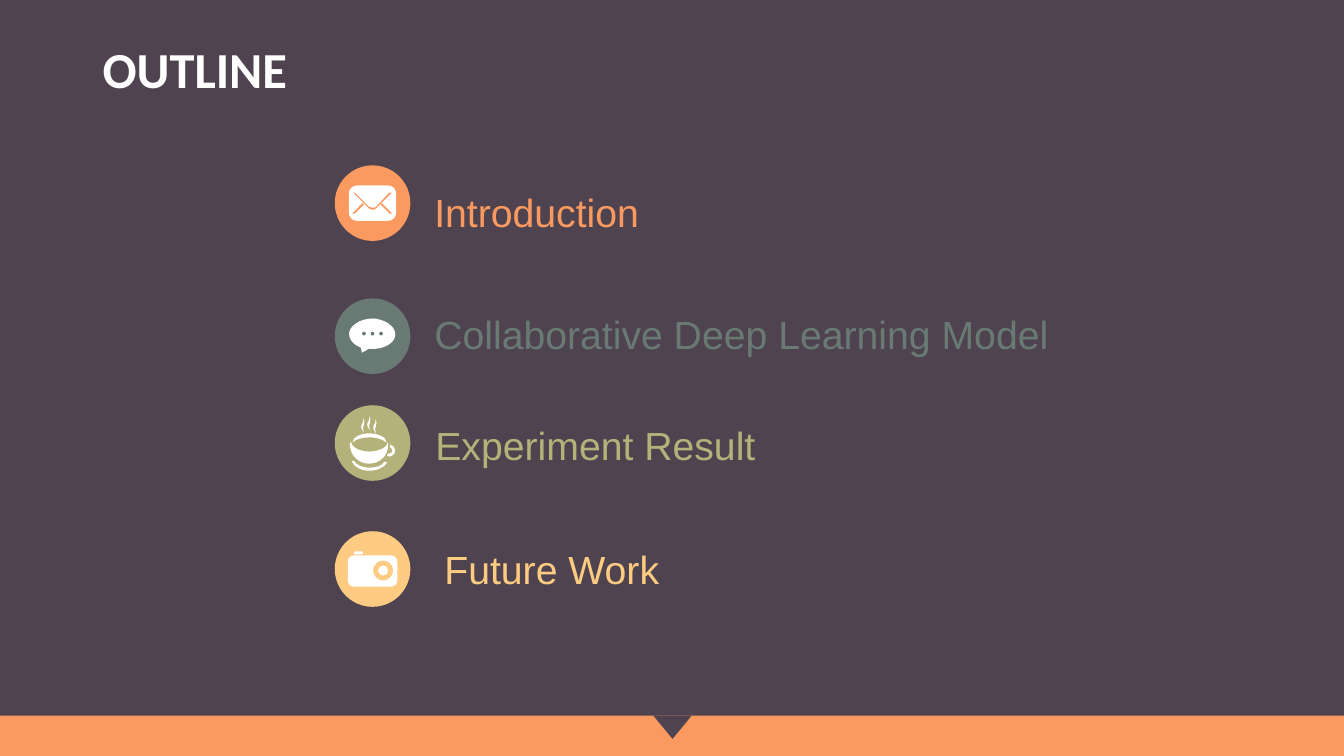
from dataclasses import dataclass

from lxml import etree
from pptx import Presentation
from pptx.dml.color import RGBColor
from pptx.enum.shapes import MSO_SHAPE
from pptx.enum.text import MSO_ANCHOR, MSO_AUTO_SIZE
from pptx.oxml.ns import qn
from pptx.util import Inches, Pt

RECTANGLE, TRIANGLE, OVAL = MSO_SHAPE.RECTANGLE, MSO_SHAPE.ISOSCELES_TRIANGLE, MSO_SHAPE.OVAL
TOP = MSO_ANCHOR.TOP
FIT_SHAPE, NO_FIT = MSO_AUTO_SIZE.SHAPE_TO_FIT_TEXT, MSO_AUTO_SIZE.NONE

COLORS = {
    "plum": "4F434F", "orange": "FA9A60", "slate": "697A74",
    "olive": "B4B17A", "yellow": "FDCB82", "white": "FFFFFF",
}
BADGE_LEFT, BADGE_SIZE = 3.32, 0.75
ARC = 0.55  # control distance of a quarter circle, as a share of its radius

# A step holds one point (start or line) or three points (cubic curve)
Step = tuple[float, ...]
Outline = list[Step]


@dataclass
class Topic:
    text: str
    color: str
    badge_top: float
    text_left: float
    text_top: float
    text_width: float
    icon: list[Outline]


# Outlines, in hundredths of an inch from the badge's top left corner
def round_box(left: float, top: float, width: float, height: float, radius: float) -> Outline:
    right, bottom, gap = left + width, top + height, radius * (1 - ARC)
    return [
        (left + radius, top), (right - radius, top),
        (right - gap, top, right, top + gap, right, top + radius), (right, bottom - radius),
        (right, bottom - gap, right - gap, bottom, right - radius, bottom),
        (left + radius, bottom),
        (left + gap, bottom, left, bottom - gap, left, bottom - radius), (left, top + radius),
        (left, top + gap, left + gap, top, left + radius, top),
    ]


def circle(x: float, y: float, radius: float) -> Outline:
    box = round_box(x - radius, y - radius, 2 * radius, 2 * radius, radius)
    return [box[0]] + [step for step in box if len(step) == 6]


def steam(x: float, y: float) -> Outline:
    return [(x, y), (x + 4, y + 6, x - 2, y + 6, x + 1, y + 14),
            (x - 6, y + 5, x + 2, y + 7, x, y)]


crease = [(28, 37), (17, 48), (20, 48), (29, 39)]
ENVELOPE = [
    [(74.5 - x, y) for x, y in crease],
    crease,
    [(18, 27), (34, 43), (35, 44, 36, 44, 37, 44), (39, 44, 40, 44, 41, 43),
     (57, 27), (54, 27), (41, 41), (40, 42, 39, 42, 37, 42),
     (36, 42, 35, 42, 34, 41), (20, 27)],
    round_box(14, 20, 47, 35, 8),
]
SPEECH_BUBBLE = [
    *[circle(x, 35, 2) for x in (46, 37.5, 29)],
    [(38, 20), (40, 20, 42, 20, 44, 21), (57, 24, 64, 34, 58, 42),
     (53, 48, 44, 51, 34, 50), (27, 54), (26, 49),
     (13, 44, 10, 32, 21, 25), (25, 22, 31, 20, 38, 20)],
]
CUP = [
    # Saucer, handle, bowl, rim
    [(19, 55), (21, 59, 27, 62, 34, 62), (41, 62, 48, 60, 49, 56), (52, 57),
     (49, 62, 42, 65, 34, 65), (26, 65, 19, 61, 17, 56)],
    [(55, 39), (58, 40, 60, 42, 60, 45), (60, 48, 57, 51, 54, 51), (52, 50),
     (53, 48), (54, 48), (56, 48, 57, 47, 57, 45), (57, 44, 56, 42, 55, 42)],
    [(53, 36), (53, 39), (53, 50, 45, 58, 34, 58), (24, 58, 15, 50, 15, 39),
     (16, 36), (16, 41, 24, 46, 34, 46), (45, 46, 53, 41, 53, 36)],
    [(34, 28), (43, 28, 51, 32, 51, 36), (51, 37), (48, 34, 42, 32, 34, 32),
     (27, 32, 20, 34, 18, 37), (18, 36), (18, 32, 25, 28, 34, 28)],
    *[steam(x, y) for x, y in ((40, 14), (28, 13), (34, 11))],
]
CAMERA = [
    circle(48, 39, 5),
    circle(48, 39, 10),
    round_box(13, 24, 49, 31, 6),
    round_box(19, 20, 9, 3, 1),
]

TOPICS = [
    Topic("Introduction", "orange", 1.64, 4.21, 1.82, 2.26, ENVELOPE),
    Topic("Collaborative Deep Learning Model", "slate", 2.96, 4.21, 3.03, 6.37, SPEECH_BUBBLE),
    Topic("Experiment Result", "olive", 4.02, 4.22, 4.13, 3.42, CUP),
    Topic("Future Work", "yellow", 5.27, 4.31, 5.36, 2.36, CAMERA),
]


def rgb(color: str) -> RGBColor:
    return RGBColor.from_string(COLORS[color])


def paint(shape, color: str) -> None:
    shape.shadow.inherit = False
    shape.fill.solid()
    shape.fill.fore_color.rgb = rgb(color)
    shape.line.fill.background()


def add_preset(page, kind, left: float, top: float, width: float, height: float, color: str):
    shape = page.shapes.add_shape(kind, Inches(left), Inches(top), Inches(width), Inches(height))
    paint(shape, color)
    return shape


def add_icon(page, outlines: list[Outline], top: float) -> None:
    scaled = [[tuple(Inches(value / 100) for value in step) for step in outline]
              for outline in outlines]
    builder = page.shapes.build_freeform(*scaled[0][0])
    for index, outline in enumerate(scaled):
        if index:
            builder.move_to(*outline[0])
        builder.add_line_segments([step[-2:] for step in outline[1:]], close=True)
    icon = builder.convert_to_shape(Inches(BADGE_LEFT), Inches(top))
    paint(icon, "white")

    # Bend the segments that have control points
    origin = (icon.left - Inches(BADGE_LEFT), icon.top - Inches(top))
    steps = [step for outline in scaled for step in outline[1:]]
    for segment, step in zip(list(icon.element.iter(qn("a:lnTo"))), steps):
        if len(step) == 6:
            segment.tag = qn("a:cubicBezTo")
            for index in (0, 2):
                control = etree.Element(qn("a:pt"), x=str(step[index] - origin[0]),
                                        y=str(step[index + 1] - origin[1]))
                segment.insert(index // 2, control)


def add_text(page, text: str, left: float, top: float, width: float, height: float,
             font: str, size: float, color: str, title: bool = False) -> None:
    box = page.shapes.add_textbox(Inches(left), Inches(top), Inches(width), Inches(height))
    frame = box.text_frame
    frame.word_wrap = title
    frame.auto_size = NO_FIT if title else FIT_SHAPE
    frame.vertical_anchor = TOP
    para = frame.paragraphs[0]
    para.line_spacing = 0.9 if title else 1.0
    span = para.add_run()
    span.text = text
    span.font.name = font
    span.font.size = Pt(size)
    span.font.bold = title
    span.font.color.rgb = rgb(color)


def main() -> None:
    deck = Presentation()
    deck.slide_width, deck.slide_height = Inches(13.33), Inches(7.5)
    page = deck.slides.add_slide(deck.slide_layouts[6])
    page.background.fill.solid()
    page.background.fill.fore_color.rgb = rgb("plum")

    # Footer band with its notch
    add_preset(page, RECTANGLE, 0, 7.1, 13.33, 0.4, "orange")
    add_preset(page, TRIANGLE, 6.48, 7.1, 0.38, 0.23, "plum").rotation = 180

    # Title
    add_text(page, "OUTLINE", 0.92, 0.4, 11.5, 1.45, "Calibri", 36, "white", title=True)

    # Topics
    for topic in TOPICS:
        add_preset(page, OVAL, BADGE_LEFT, topic.badge_top, BADGE_SIZE, BADGE_SIZE, topic.color)
        add_icon(page, topic.icon, topic.badge_top)
        add_text(page, topic.text, topic.text_left, topic.text_top, topic.text_width, 0.57,
                 "Arial", 28, topic.color)

    deck.save("out.pptx")


if __name__ == "__main__":
    main()
